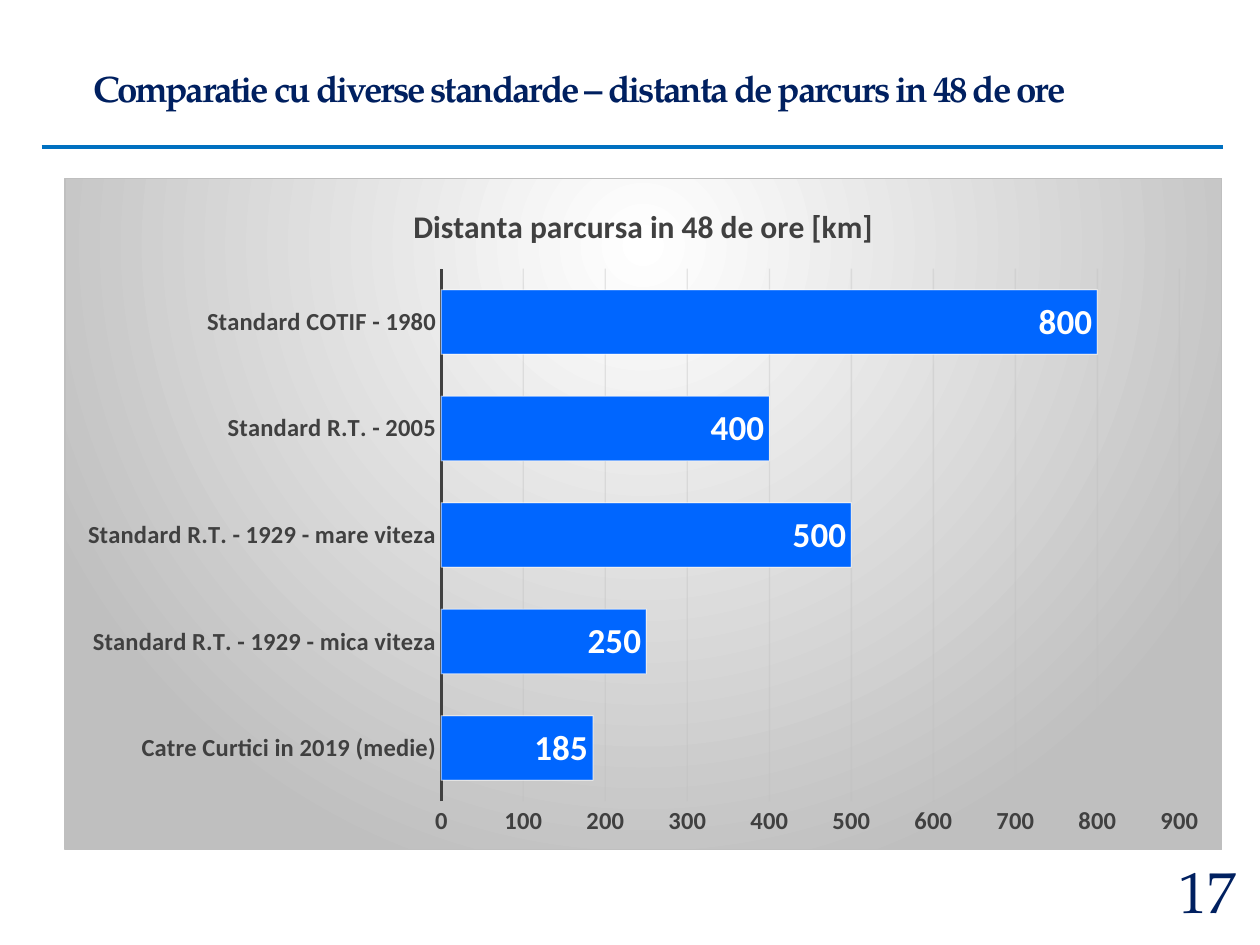
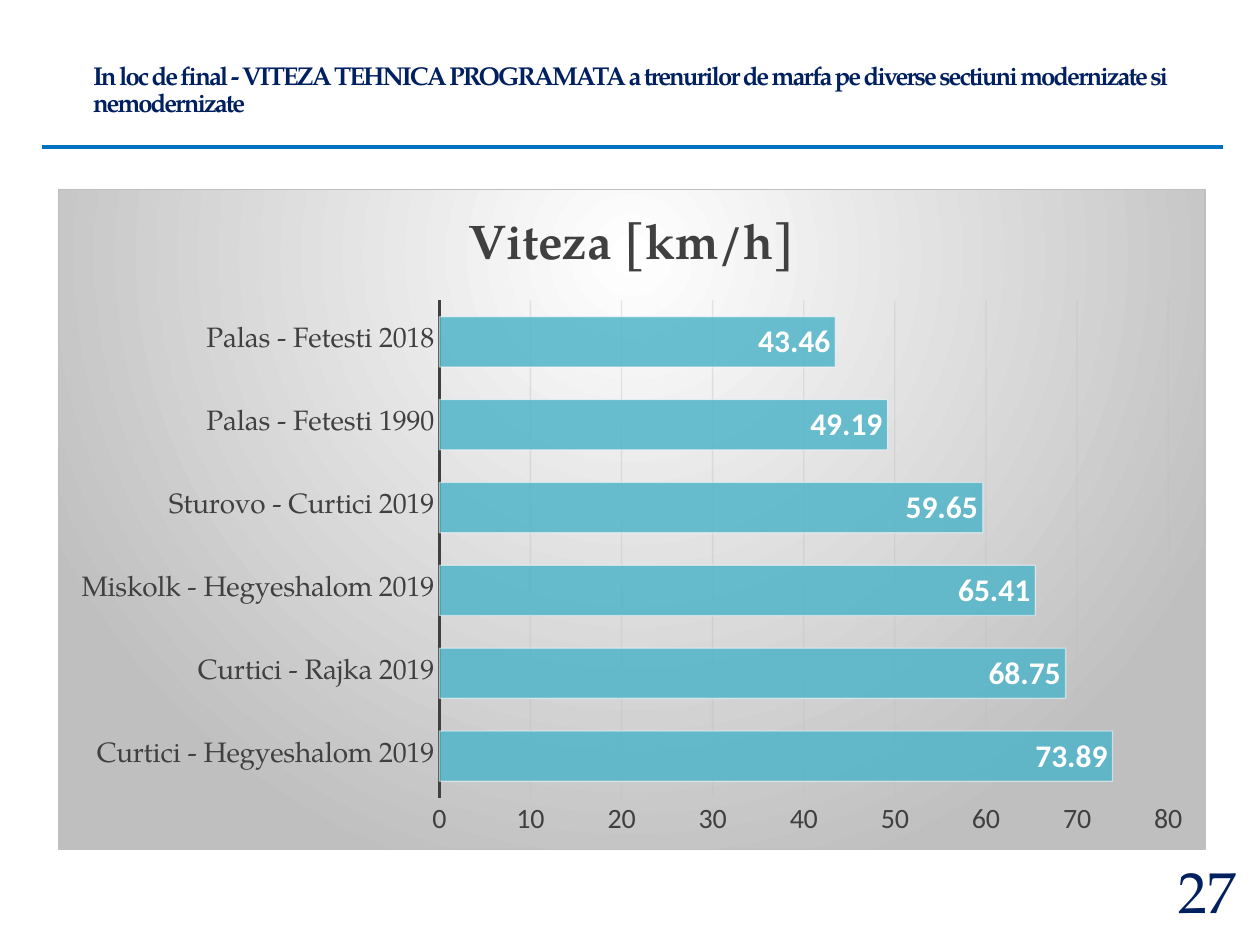
from lxml import etree
from pptx import Presentation
from pptx.chart.data import CategoryChartData
from pptx.dml.color import RGBColor
from pptx.enum.chart import XL_CHART_TYPE as ChartType, XL_LABEL_POSITION as LabelPosition
from pptx.enum.chart import XL_TICK_MARK as TickMark
from pptx.enum.shapes import MSO_CONNECTOR as Connector
from pptx.enum.text import MSO_ANCHOR as Anchor, PP_ALIGN as Align
from pptx.oxml import parse_xml
from pptx.oxml.ns import nsdecls, qn
from pptx.util import Pt

NAVY = RGBColor(0x00, 0x20, 0x60)
RULE_BLUE = RGBColor(0x00, 0x70, 0xC0)
BAR_BLUE = RGBColor(0x00, 0x66, 0xFF)
BAR_TEAL = RGBColor(0x50, 0xB4, 0xC8)
DARK_GREY = RGBColor(0x40, 0x40, 0x40)
GREY = RGBColor(0xBF, 0xBF, 0xBF)
WHITE = RGBColor(0xFF, 0xFF, 0xFF)
BLACK = RGBColor(0x00, 0x00, 0x00)
SERIF, SANS = "TeX Gyre Pagella", "Calibri"

# Content: boxes are left, top, width, height; fonts are name, size, bold
SLIDES = [
    dict(
        number="17",
        title="Comparatie cu diverse standarde – distanta de parcurs in 48 de ore",
        title_size=21, title_width=620.6,
        chart_box=(36.7, 101.5, 661.7, 384.5),
        chart_title="Distanta parcursa in 48 de ore [km]",
        values=[
            ("Catre Curtici in 2019 (medie)", 185),
            ("Standard R.T. - 1929 - mica viteza", 250),
            ("Standard R.T. - 1929 - mare viteza", 500),
            ("Standard R.T. - 2005", 400),
            ("Standard COTIF - 1980", 800),
        ],
        axis_maximum=900, axis_step=100, number_format="#,##0",
        bar_color=BAR_BLUE, bar_opacity=100,
        heading_font=(SANS, 18, True), category_font=(SANS, 14, True),
        value_font=(SANS, 14, True), label_font=(SANS, 20, True),
    ),
    dict(
        number="27",
        title="In loc de final - VITEZA TEHNICA PROGRAMATA a trenurilor de marfa "
              "pe diverse sectiuni modernizate si nemodernizate",
        title_size=14.7, title_width=643,
        chart_box=(33.1, 108, 655.9, 378),
        chart_title="Viteza [km/h]",
        values=[
            ("Curtici - Hegyeshalom 2019", 73.89),
            ("Curtici - Rajka 2019", 68.75),
            ("Miskolk - Hegyeshalom 2019", 65.41),
            ("Sturovo - Curtici 2019", 59.65),
            ("Palas - Fetesti 1990", 49.19),
            ("Palas - Fetesti 2018", 43.46),
        ],
        axis_maximum=80, axis_step=10, number_format="General",
        bar_color=BAR_TEAL, bar_opacity=85,
        heading_font=(SERIF, 28, True), category_font=(SERIF, 16, False),
        value_font=(SANS, 16, False), label_font=(SANS, 18, True),
    ),
]


def style_font(font, name, size, bold, color):
    font.name, font.size, font.bold = name, Pt(size), bold
    font.color.rgb = color


def style_line(line, color, width):
    line.color.rgb = color
    line.width = Pt(width)


def set_opacity(chart, color_path, percent):
    for color in chart.element.xpath(color_path):
        etree.SubElement(color, qn("a:alpha")).set("val", str(percent * 1000))


def add_text(slide, box, text, size, bold, anchor, align=Align.LEFT):
    frame = slide.shapes.add_textbox(*map(Pt, box)).text_frame
    frame.word_wrap = True
    frame.vertical_anchor = anchor
    paragraph = frame.paragraphs[0]
    paragraph.alignment = align
    run = paragraph.add_run()
    run.text = text
    style_font(paragraph.font, SERIF, size, bold, NAVY)
    return paragraph, run


def add_frame(slide, content):
    # Page number
    add_text(slide, (663.1, 500.4, 50.4, 31.7), content["number"], 33, False,
             Anchor.BOTTOM, Align.RIGHT)
    # Rule below the title
    rule = slide.shapes.add_connector(Connector.STRAIGHT, Pt(23.8), Pt(84.2), Pt(699.1), Pt(84.2))
    style_line(rule.line, RULE_BLUE, 2.25)
    etree.SubElement(rule.element.spPr, qn("a:effectLst"))
    # Title, tightly spaced
    paragraph, run = add_text(slide, (46.1, 33.1, content["title_width"], 37.4),
                              content["title"], content["title_size"], True, Anchor.MIDDLE)
    paragraph.line_spacing = 0.9
    run.font.bold = True
    run.font.size = Pt(content["title_size"])
    run._r.get_or_add_rPr().set("spc", "-120")


def fill_background(chart):
    properties = parse_xml(
        f'<c:spPr {nsdecls("c", "a")}><a:gradFill><a:gsLst>'
        f'<a:gs pos="0"><a:srgbClr val="{WHITE}"/></a:gs>'
        f'<a:gs pos="100000"><a:srgbClr val="{GREY}"/></a:gs></a:gsLst>'
        '<a:path path="circle"><a:fillToRect l="50000" t="10000" r="50000" b="90000"/></a:path>'
        f'</a:gradFill><a:ln w="{Pt(0.75)}"><a:solidFill><a:srgbClr val="{GREY}"/></a:solidFill>'
        '</a:ln></c:spPr>')
    chart.element.find(qn("c:chart")).addnext(properties)


def add_bar_chart(slide, content):
    data = CategoryChartData()
    data.categories = [name for name, _ in content["values"]]
    data.add_series(content["chart_title"], [value for _, value in content["values"]])
    chart = slide.shapes.add_chart(ChartType.BAR_CLUSTERED, *map(Pt, content["chart_box"]),
                                   data).chart
    style_font(chart.font, "Arial", 10, False, BLACK)
    fill_background(chart)
    chart.has_legend = False

    # Heading
    chart.has_title = True
    heading = chart.chart_title.text_frame
    heading.text = content["chart_title"]
    style_font(heading.paragraphs[0].font, *content["heading_font"], DARK_GREY)

    # Axes
    categories, values = chart.category_axis, chart.value_axis
    for axis, font in ((categories, "category_font"), (values, "value_font")):
        axis.major_tick_mark = axis.minor_tick_mark = TickMark.NONE
        style_font(axis.tick_labels.font, *content[font], DARK_GREY)
    style_line(categories.format.line, DARK_GREY, 1.5)
    values.format.line.fill.background()
    values.minimum_scale, values.maximum_scale = 0, content["axis_maximum"]
    values.major_unit = content["axis_step"]
    values.tick_labels.number_format = content["number_format"]
    values.tick_labels.number_format_is_linked = False
    style_line(values.major_gridlines.format.line, GREY, 0.75)
    set_opacity(chart, ".//c:majorGridlines//a:srgbClr", 36)

    # Bars
    plot = chart.plots[0]
    plot.gap_width = 65
    plot.vary_by_categories = False
    series = plot.series[0]
    series.invert_if_negative = False
    series.format.fill.solid()
    series.format.fill.fore_color.rgb = content["bar_color"]
    style_line(series.format.line, WHITE, 0.75)
    set_opacity(chart, ".//c:ser/c:spPr/a:solidFill/a:srgbClr", content["bar_opacity"])
    set_opacity(chart, ".//c:ser/c:spPr/a:ln//a:srgbClr", 50)

    # Value labels
    labels = series.data_labels
    labels.show_value = True
    labels.position = LabelPosition.INSIDE_END
    labels.number_format = content["number_format"]
    labels.number_format_is_linked = False
    style_font(labels.font, *content["label_font"], WHITE)


def main():
    presentation = Presentation()
    presentation.slide_width, presentation.slide_height = Pt(720), Pt(540)
    for content in SLIDES:
        slide = presentation.slides.add_slide(presentation.slide_layouts[6])
        add_frame(slide, content)
        add_bar_chart(slide, content)
    presentation.save("out.pptx")


if __name__ == "__main__":
    main()
